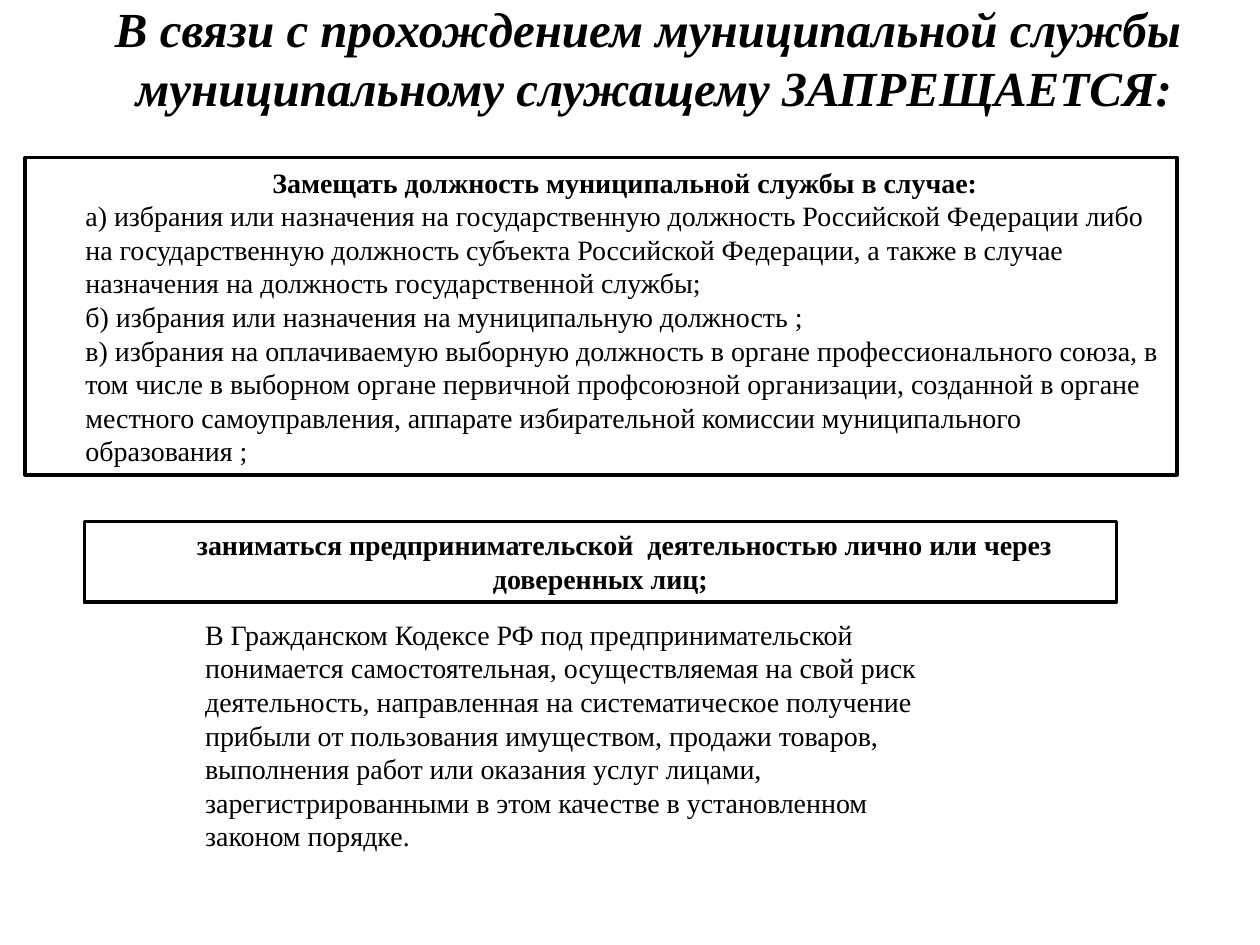
from dataclasses import dataclass

from pptx import Presentation, util as u
from pptx.dml.color import RGBColor
from pptx.enum import shapes, text

COLUMNS, ROWS = 100, 75
CELL = u.Inches(0.1)

TITLE = [
    "В связи с прохождением муниципальной службы ",
    "муниципальному служащему ЗАПРЕЩАЕТСЯ:",
]
CASES_HEADING = "Замещать должность муниципальной службы в случае:"
CASES = [
    "а) избрания или назначения на государственную должность Российской Федерации либо",
    "на государственную должность субъекта Российской Федерации, а также в случае",
    "назначения на должность государственной службы;",
    "б) избрания или назначения на муниципальную должность ;",
    "в) избрания на оплачиваемую выборную должность в органе профессионального союза, в",
    "том числе в выборном органе первичной профсоюзной организации, созданной в органе",
    "местного самоуправления, аппарате избирательной комиссии муниципального",
    "образования ;",
]
BUSINESS = "заниматься предпринимательской  деятельностью лично или через доверенных лиц;"
DEFINITION = (
    "В Гражданском Кодексе РФ под предпринимательской понимается самостоятельная, "
    "осуществляемая на свой риск деятельность, направленная на систематическое получение "
    "прибыли от пользования имуществом, продажи товаров, выполнения работ или оказания услуг "
    "лицами, зарегистрированными в этом качестве в установленном законом порядке."
)


@dataclass(frozen=True)
class Theme:
    """Colours, font, type sizes and measures of the slide."""
    ink: RGBColor = RGBColor(0, 0, 0)
    paper: RGBColor = RGBColor(255, 255, 255)
    font: str = "Times New Roman"
    title: u.Length = u.Pt(28)
    body: u.Length = u.Pt(16)
    border: u.Length = u.Pt(2)
    indent: u.Length = u.Inches(0.38)


THEME = Theme()


def place(column, row, width, height):
    """Turn grid columns and rows into slide lengths."""
    return [round(CELL * count) for count in (column, row, width, height)]


def prepare_frame(shape, anchor):
    """Make the text wrap and the shape fit it."""
    frame = shape.text_frame
    frame.word_wrap = True
    frame.auto_size = text.MSO_AUTO_SIZE.SHAPE_TO_FIT_TEXT
    frame.vertical_anchor = anchor
    return frame


def add_text_box(slide, cells, anchor=text.MSO_ANCHOR.TOP):
    """Add an empty text box and return its frame."""
    return prepare_frame(slide.shapes.add_textbox(*place(*cells)), anchor)


def add_bordered_box(slide, cells, anchor=text.MSO_ANCHOR.TOP):
    """Add an outlined rectangle and return its frame."""
    shape = slide.shapes.add_shape(shapes.MSO_SHAPE.RECTANGLE, *place(*cells))
    shape.shadow.inherit = False
    shape.fill.solid()
    shape.fill.fore_color.rgb = THEME.paper
    shape.line.color.rgb = THEME.ink
    shape.line.width = THEME.border
    return prepare_frame(shape, anchor)


def write(frame, lines, size=THEME.body, centred=False, indent=THEME.indent, bold=False, italic=False):
    """Append one paragraph for each line, filling the empty first one."""
    for line in lines:
        first = frame.paragraphs[0]
        paragraph = frame.add_paragraph() if first.runs else first
        paragraph.alignment = text.PP_ALIGN.CENTER if centred else text.PP_ALIGN.LEFT
        properties = paragraph._p.get_or_add_pPr()
        properties.set("marL", "0")
        properties.set("indent", str(int(indent)))
        run = paragraph.add_run()
        run.text = line
        run.font.name = THEME.font
        run.font.size = size
        run.font.bold = bold
        run.font.italic = italic
        run.font.color.rgb = THEME.ink


def main():
    """Build the slide on restrictions for municipal employees."""
    presentation = Presentation()
    presentation.slide_width = CELL * COLUMNS
    presentation.slide_height = CELL * ROWS
    slide = presentation.slides.add_slide(presentation.slide_layouts[6])

    title = add_text_box(slide, (0, -0.7, COLUMNS, 10.5), text.MSO_ANCHOR.MIDDLE)
    write(title, TITLE, THEME.title, centred=True, bold=True, italic=True)

    cases = add_bordered_box(slide, (2, 12.5, 91.4, 25.2), text.MSO_ANCHOR.MIDDLE)
    write(cases, [CASES_HEADING], centred=True, bold=True)
    write(cases, CASES)

    business = add_bordered_box(slide, (6.7, 41.4, 81.9, 6.4))
    write(business, [BUSINESS], centred=True, bold=True)

    definition = add_text_box(slide, (15.3, 48.5, 61.4, 19.8))
    write(definition, [DEFINITION], indent=0)

    presentation.save("out.pptx")


if __name__ == "__main__":
    main()
